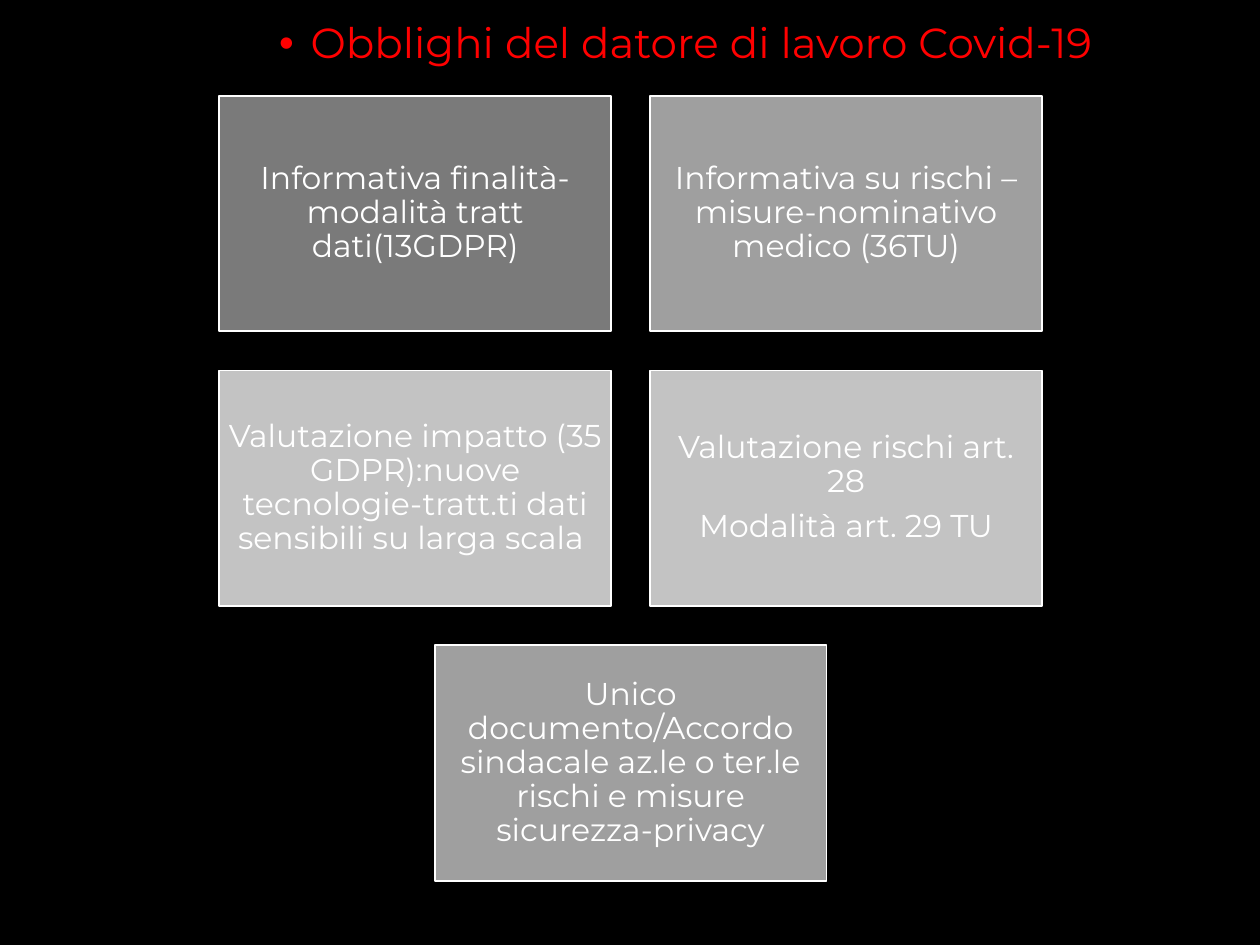
from dataclasses import dataclass

from lxml.etree import SubElement
from pptx import Presentation
from pptx.dml.color import RGBColor
from pptx.enum.shapes import MSO_SHAPE
from pptx.enum.text import MSO_ANCHOR, MSO_AUTO_SIZE, PP_ALIGN
from pptx.oxml.ns import qn
from pptx.slide import Slide
from pptx.util import Inches, Pt


@dataclass(frozen=True)
class Theme:
    font: str = "Montserrat"
    background: RGBColor = RGBColor(0x00, 0x00, 0x00)
    heading: RGBColor = RGBColor(0xFF, 0x00, 0x00)
    light: RGBColor = RGBColor(0xFF, 0xFF, 0xFF)
    dark_gray: RGBColor = RGBColor(0x7A, 0x7A, 0x7A)
    mid_gray: RGBColor = RGBColor(0x9F, 0x9F, 0x9F)
    pale_gray: RGBColor = RGBColor(0xC3, 0xC3, 0xC3)
    heading_size: Pt = Pt(24)
    card_size: Pt = Pt(18)
    line_spacing: float = 0.9
    card_space_after: Pt = Pt(6.3)


@dataclass(frozen=True)
class Grid:
    left: float = 1.74
    top: float = 0.76
    width: float = 3.11
    height: float = 1.87
    gap: float = 0.31

    def place(self, column: float, row: float) -> tuple:
        return (
            Inches(self.left + column * (self.width + self.gap)),
            Inches(self.top + row * (self.height + self.gap)),
            Inches(self.width),
            Inches(self.height),
        )


@dataclass(frozen=True)
class Duty:
    column: float
    row: float
    fill: RGBColor
    lines: tuple[str, ...]


THEME = Theme()
GRID = Grid()
DUTIES = (
    Duty(0, 0, THEME.dark_gray, ("Informativa finalità-modalità tratt dati(13GDPR)",)),
    Duty(1, 0, THEME.mid_gray, ("Informativa su rischi –misure-nominativo medico (36TU)",)),
    Duty(0, 1, THEME.pale_gray, (
        "Valutazione impatto (35 GDPR):nuove tecnologie-tratt.ti dati sensibili su larga scala ",
    )),
    Duty(1, 1, THEME.pale_gray, ("Valutazione rischi art. 28", "Modalità art. 29 TU")),
    Duty(0.5, 2, THEME.mid_gray, (
        "Unico documento/Accordo sindacale az.le o ter.le rischi e misure sicurezza-privacy",
    )),
)


def style_paragraph(paragraph, size: Pt, color: RGBColor) -> None:
    paragraph.alignment = PP_ALIGN.CENTER
    paragraph.line_spacing = THEME.line_spacing
    paragraph.font.name = THEME.font
    paragraph.font.size = size
    paragraph.font.color.rgb = color


def add_bullet(paragraph, indent: float) -> None:
    properties = paragraph._p.get_or_add_pPr()
    properties.set("marL", str(Inches(indent)))
    properties.set("indent", str(-Inches(indent)))
    bullet_font = SubElement(properties, qn("a:buFont"))
    bullet_font.set("typeface", "Arial")
    SubElement(properties, qn("a:buChar")).set("char", "•")
    # The schema wants the default run properties after the bullet.
    defaults = properties.find(qn("a:defRPr"))
    if defaults is not None:
        properties.append(defaults)


def draw_heading(slide: Slide, text: str) -> None:
    heading = slide.shapes.title
    heading.left, heading.top = Inches(1.54), Inches(0.13)
    heading.width, heading.height = Inches(7.8), Inches(0.55)
    frame = heading.text_frame
    frame.text = text
    frame.vertical_anchor = MSO_ANCHOR.TOP
    frame.auto_size = MSO_AUTO_SIZE.NONE
    paragraph = frame.paragraphs[0]
    style_paragraph(paragraph, THEME.heading_size, THEME.heading)
    add_bullet(paragraph, 0.25)


def draw_duty(slide: Slide, duty: Duty) -> None:
    card = slide.shapes.add_shape(MSO_SHAPE.RECTANGLE, *GRID.place(duty.column, duty.row))
    card.shadow.inherit = False
    card.fill.solid()
    card.fill.fore_color.rgb = duty.fill
    card.line.color.rgb = THEME.light
    card.line.width = Pt(1)
    frame = card.text_frame
    frame.word_wrap = True
    frame.vertical_anchor = MSO_ANCHOR.MIDDLE
    frame.margin_left = frame.margin_right = Inches(0.07)
    frame.margin_top = frame.margin_bottom = Inches(0.07)
    frame.text = "\n".join(duty.lines)
    for paragraph in frame.paragraphs:
        style_paragraph(paragraph, THEME.card_size, THEME.light)
        paragraph.space_after = THEME.card_space_after


def main() -> None:
    deck = Presentation()
    deck.slide_width, deck.slide_height = Inches(10), Inches(7.5)
    slide = deck.slides.add_slide(deck.slide_layouts.get_by_name("Title Only"))
    slide.background.fill.solid()
    slide.background.fill.fore_color.rgb = THEME.background
    draw_heading(slide, "Obblighi del datore di lavoro Covid-19")
    for duty in DUTIES:
        draw_duty(slide, duty)
    deck.save("out.pptx")


if __name__ == "__main__":
    main()
